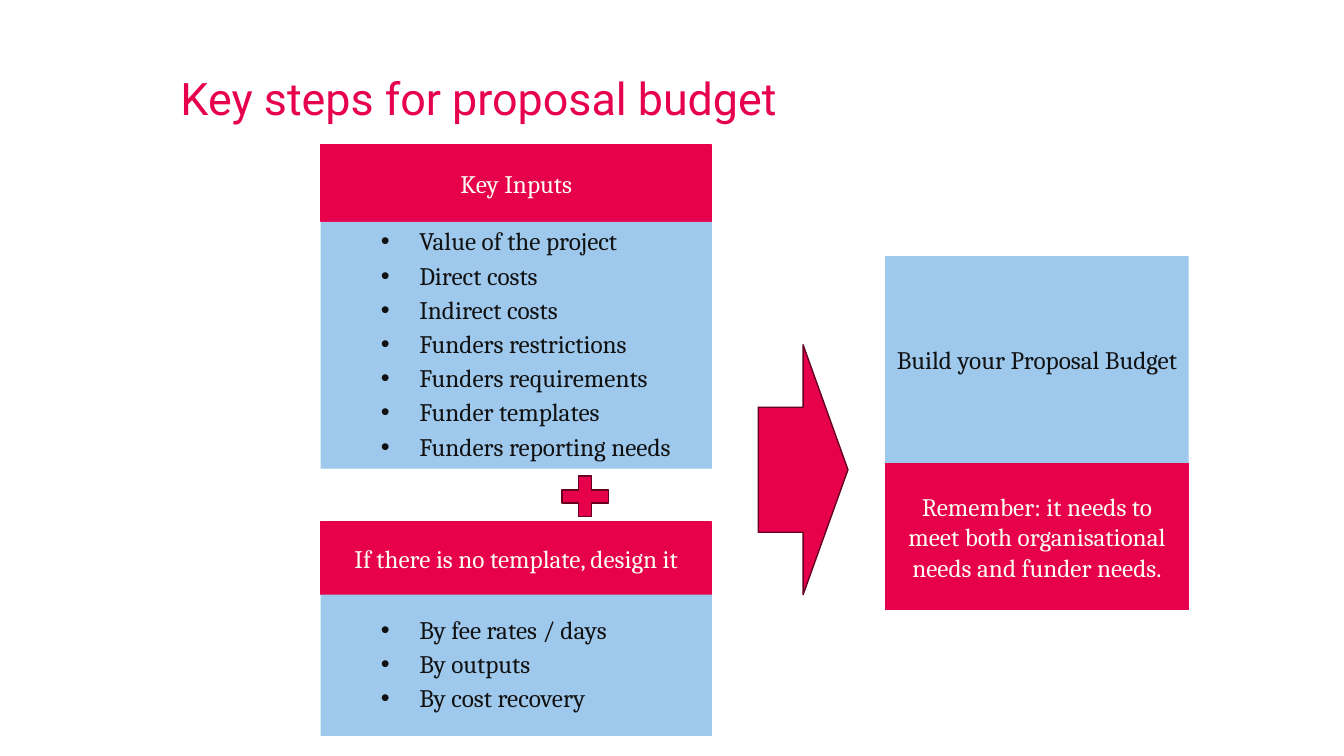
import pptx
import pptx.dml.color
import pptx.enum.shapes
import pptx.enum.text
import pptx.util
from dataclasses import dataclass
from lxml import etree

Inches, Pt = pptx.util.Inches, pptx.util.Pt
SHAPE = pptx.enum.shapes.MSO_SHAPE
ALIGN = pptx.enum.text.PP_ALIGN
ANCHOR = pptx.enum.text.MSO_ANCHOR

TITLE = "Key steps for proposal budget"
INPUTS = ["Value of the project", "Direct costs", "Indirect costs",
          "Funders restrictions", "Funders requirements",
          "Funder templates", "Funders reporting needs"]
DESIGN = ["By fee rates / days", "By outputs", "By cost recovery"]
REMIND = "Remember:\u00a0it needs to meet both organisational needs and funder needs."

# Columns: left edge and width; stacks: top edge, then (style, height, lines)
COLS = {"steps": (3.18, 3.88), "arrow": (7.52, 0.89), "result": (8.78, 3.01)}
STACKS = [
    ("steps", 1.44, [("head", 0.76, ["Key Inputs"]), ("list", 2.45, INPUTS)]),
    ("steps", 5.18, [("head", 0.72, ["If there is no template, design it"]),
                     ("list", 1.4, DESIGN)]),
    ("result", 2.54, [("body", 2.06, ["Build your Proposal Budget"]),
                      ("head", 1.45, [REMIND])]),
]
SIGNS = [(SHAPE.RIGHT_ARROW, *COLS["arrow"], 3.42, 2.48),
         (SHAPE.MATH_PLUS, 5.49, 0.63, 4.65, 0.55)]


@dataclass
class Theme:
    red: str = "E7004C"
    wine: str = "650021"
    sky: str = "9EC9ED"
    ink: str = "111111"
    cream: str = "FCFCF1"
    head: str = "Roboto"
    text: str = "Cambria"
    big: int = 32
    size: int = 18


theme = Theme()


def color(code):
    return pptx.dml.color.RGBColor.from_string(code)


def write(para, text, face, size, code):
    run = para.add_run()
    run.text = text
    run.font.name, run.font.size = face, Pt(size)
    run.font.color.rgb = color(code)


def bullet(para, first):
    props = para._p.get_or_add_pPr()
    props.set("marL", str(Inches(0.88)))
    props.set("indent", str(Inches(-0.38)))
    for tag, key, value in (("buFont", "typeface", "Arial"), ("buChar", "char", "•")):
        etree.SubElement(props, pptx.oxml.ns.qn("a:" + tag)).set(key, value)
    para.level = 1
    para.line_spacing = 0.9
    para.space_before = Pt(0 if first else 5)


def draw(slide, kind, left, width, top, height, fill, line=None):
    shape = slide.shapes.add_shape(
        kind, Inches(left), Inches(top), Inches(width), Inches(height))
    shape.shadow.inherit = False
    shape.fill.solid()
    shape.fill.fore_color.rgb = color(fill)
    if line:
        shape.line.color.rgb = color(line)
        shape.line.width = Pt(1)
    else:
        shape.line.fill.background()
    return shape


def panel(slide, style, left, width, top, height, lines):
    red = style == "head"
    box = draw(slide, SHAPE.RECTANGLE, left, width, top, height,
               theme.red if red else theme.sky, theme.red if red else None)
    frame = box.text_frame
    frame.word_wrap = True
    frame.vertical_anchor = ANCHOR.MIDDLE
    for i, text in enumerate(lines):
        para = frame.add_paragraph() if i else frame.paragraphs[0]
        if style == "list":
            bullet(para, i == 0)
            para.alignment = ALIGN.LEFT
        else:
            para.alignment = ALIGN.CENTER
        write(para, text, theme.text, theme.size, theme.cream if red else theme.ink)


def main():
    deck = pptx.Presentation()
    deck.slide_width, deck.slide_height = Inches(13.33), Inches(7.5)
    slide = deck.slides.add_slide(deck.slide_layouts[5])

    title = slide.shapes.title
    title.left, title.top = Inches(1.79), Inches(0.76)
    title.width, title.height = Inches(10.63), Inches(0.66)
    frame = title.text_frame
    frame.margin_left = frame.margin_right = frame.margin_top = frame.margin_bottom = 0
    frame.vertical_anchor = ANCHOR.TOP
    para = frame.paragraphs[0]
    para.alignment, para.line_spacing = ALIGN.LEFT, 0.9
    write(para, TITLE, theme.head, theme.big, theme.red)

    for col, top, parts in STACKS:
        for style, height, lines in parts:
            panel(slide, style, *COLS[col], top, height, lines)
            top += height
    for sign in SIGNS:
        draw(slide, *sign, theme.red, theme.wine)
    deck.save("out.pptx")


if __name__ == "__main__":
    main()
